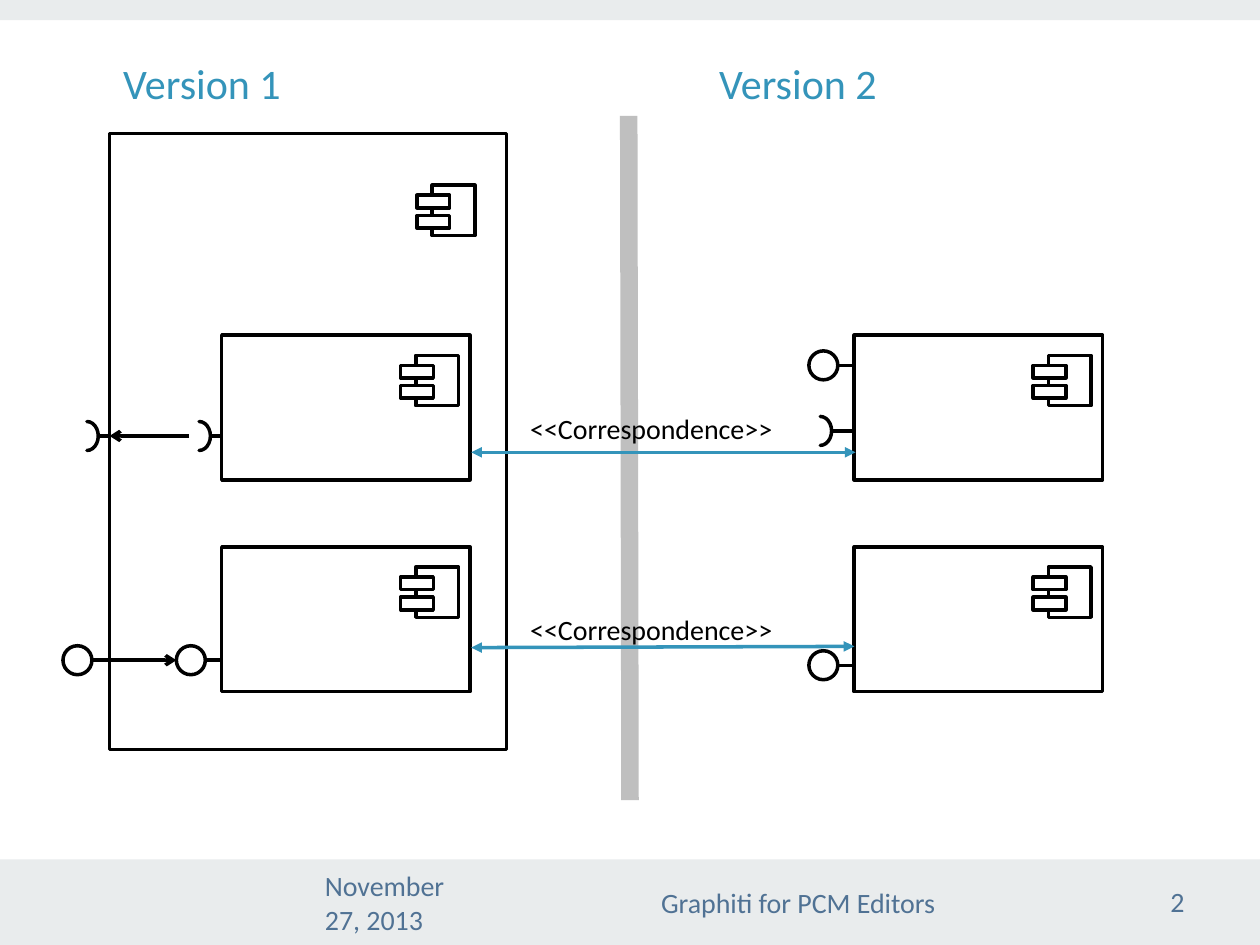
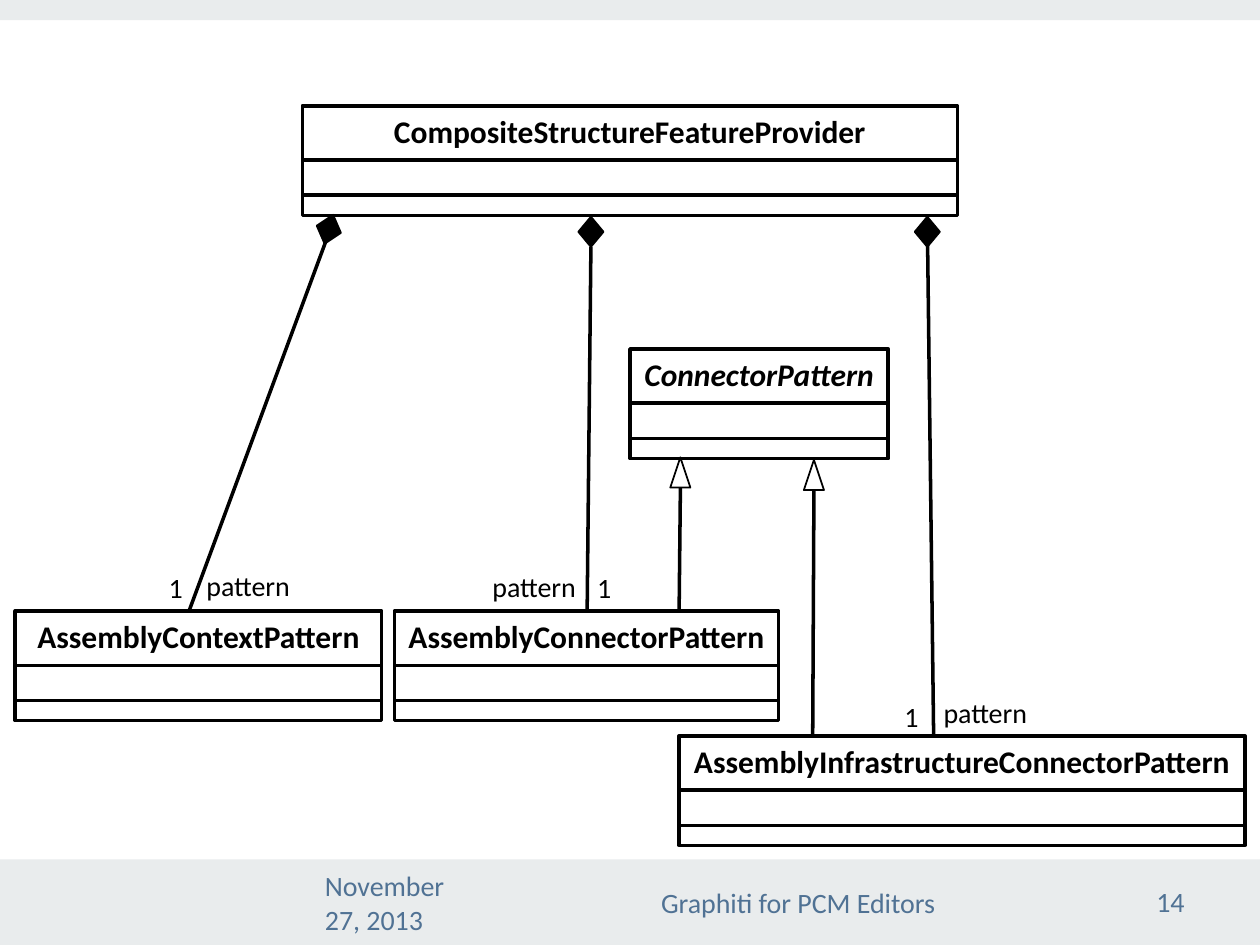
from lxml import etree
from pptx import Presentation
from pptx.dml.color import RGBColor
from pptx.enum import shapes as kinds
from pptx.enum import text as modes
from pptx.oxml import ns
from pptx.util import Inches, Pt

COLOURS = {
    "paper": "FFFFFF",
    "ink": "000000",
    "band": "E9ECED",
    "footer": "507294",
    "accent": "3494BA",
    "divider": "BFBFBF",
}
FONT = "Calibri"
BANDS = [(0, 6.82, 10, 0.68), (0, 0, 10, 0.16)]
SHAPE = kinds.MSO_SHAPE
ALIGN = modes.PP_ALIGN
LABEL = {"size": Pt(16)}
HEADING = {"size": Pt(24)}
CLASS_NAME = {"size": Pt(18), "bold": True}

NODE_SIZE = (1.97, 1.15)
BALL = 0.23
SOCKET_WIDTH = 0.09
CLASS_HEIGHT = 0.87
MARK_HEIGHT = 0.24


def colour(name):
    return RGBColor.from_string(COLOURS[name])


def write(shape, wording, formats, colour_name="ink", align=ALIGN.LEFT,
          anchor=modes.MSO_ANCHOR.TOP, wrap=False):
    frame = shape.text_frame
    frame.word_wrap = wrap
    frame.vertical_anchor = anchor
    paragraph = frame.paragraphs[0]
    paragraph.text = wording
    paragraph.alignment = align
    font = paragraph.runs[0].font
    font.name = FONT
    font.color.rgb = colour(colour_name)
    for attribute, value in formats.items():
        setattr(font, attribute, value)


def add_text(slide, box, wording, formats=LABEL, **options):
    write(slide.shapes.add_textbox(*map(Inches, box)), wording, formats, **options)


def add_figure(shapes, box, kind=SHAPE.RECTANGLE, fill="paper", line="ink", width=2):
    figure = shapes.add_shape(kind, *map(Inches, box))
    figure.shadow.inherit = False
    figure.fill.solid()
    figure.fill.fore_color.rgb = colour(fill)
    if line:
        figure.line.color.rgb = colour(line)
        figure.line.width = Pt(width)
    else:
        figure.line.fill.background()
    return figure


def add_line(shapes, start, end, line="ink", width=2, head=None, tail=None):
    connector = shapes.add_connector(
        kinds.MSO_CONNECTOR.STRAIGHT, *map(Inches, (*start, *end)))
    connector.line.color.rgb = colour(line)
    connector.line.width = Pt(width)
    outline = connector.line._get_or_add_ln()
    for tag, arrow in (("a:headEnd", head), ("a:tailEnd", tail)):
        if arrow:
            etree.SubElement(outline, ns.qn(tag), type=arrow)
    etree.SubElement(connector._element.spPr, ns.qn("a:effectLst"))


def add_base_slide(presentation, number):
    """Add a slide with the two bands and the footer texts."""
    slide = presentation.slides.add_slide(presentation.slide_layouts[6])
    for band in BANDS:
        add_figure(slide.shapes, band, fill="band", line=None)
    footers = [
        ((2.48, 6.96, 1.42, 0.4), "November 27, 2013", ALIGN.LEFT),
        ((4.21, 6.96, 4.25, 0.4), "Graphiti for PCM Editors", ALIGN.CENTER),
        ((8.86, 6.95, 0.64, 0.4), number, ALIGN.RIGHT),
    ]
    for box, wording, align in footers:
        add_text(slide, box, wording, colour_name="footer", align=align,
                 anchor=modes.MSO_ANCHOR.MIDDLE, wrap=True)
    return slide


def add_component_icon(slide, left, top):
    add_figure(slide.shapes, (left + 0.12, top, 0.34, 0.4))
    for drop in (0.08, 0.24):
        add_figure(slide.shapes, (left, top + drop, 0.26, 0.1))


def add_component(slide, left, top):
    add_figure(slide.shapes, (left, top, *NODE_SIZE))
    add_component_icon(slide, left + 1.42, top + 0.16)


def add_provided_interface(slide, left, middle, edge):
    """Draw a ball joined to the component edge."""
    add_figure(slide.shapes, (left, middle - BALL / 2, BALL, BALL), SHAPE.OVAL)
    add_line(slide.shapes, (left + BALL, middle), (edge, middle))


def add_required_interface(slide, left, middle, edge):
    """Draw a socket joined to the component edge."""
    socket = add_figure(
        slide.shapes, (left, middle - BALL / 2, SOCKET_WIDTH, BALL), SHAPE.MOON)
    socket.adjustments[0] = 0
    socket.rotation = 180
    add_line(slide.shapes, (left + SOCKET_WIDTH, middle), (edge, middle))


def add_correspondence(slide, start, end, label_top):
    add_line(slide.shapes, start, end, "accent", head="triangle", tail="triangle")
    add_text(slide, (4.11, label_top, 2.15, 0.37), "<<Correspondence>>")


def build_version_slide(presentation):
    slide = add_base_slide(presentation, "2")
    outer_left, inner_left, other_left = 0.87, 1.76, 6.78
    add_figure(slide.shapes, (outer_left, 1.06, 3.15, 4.89))
    add_component_icon(slide, 3.31, 1.47)
    add_line(slide.shapes, (4.99, 0.92), (5, 6.35), "divider", 10)

    for left in (inner_left, other_left):
        for top in (2.66, 4.34):
            add_component(slide, left, top)
    for left, middle, edge in [(1.58, 3.46, inner_left), (0.69, 3.46, outer_left),
                               (6.51, 3.42, other_left)]:
        add_required_interface(slide, left, middle, edge)
    for left, middle, edge in [(1.4, 5.24, inner_left), (0.5, 5.24, outer_left),
                               (6.42, 2.9, other_left), (6.42, 5.28, other_left)]:
        add_provided_interface(slide, left, middle, edge)

    add_line(slide.shapes, (1.5, 3.46), (outer_left, 3.46), tail="arrow")
    add_line(slide.shapes, (outer_left, 5.24), (1.4, 5.24), tail="arrow")
    add_correspondence(slide, (3.74, 3.59), (6.79, 3.59), 3.22)
    add_correspondence(slide, (3.74, 5.14), (6.78, 5.13), 4.81)
    for left, wording in ((0.88, "Version 1"), (5.61, "Version 2")):
        add_text(slide, (left, 0.41, 1.46, 0.5), wording, HEADING,
                 colour_name="accent")


def add_class(slide, left, top, width, name, italic=False):
    """Group a class box with its two compartment lines."""
    shapes = slide.shapes.add_group_shape().shapes
    box = add_figure(shapes, (left, top, width, CLASS_HEIGHT))
    write(box, name, {**CLASS_NAME, "italic": italic}, align=ALIGN.CENTER)
    for drop in (0.43, 0.71):
        add_line(shapes, (left, top + drop), (left + width, top + drop))


def add_mark(slide, kind, centre, top, width, fill, rotation=0):
    box = (centre - width / 2, top, width, MARK_HEIGHT)
    add_figure(slide.shapes, box, kind, fill, width=1).rotation = rotation


def add_composition(slide, start, end, diamond, rotation, one, role):
    """Link a part to its owner, with a diamond, multiplicity and role name."""
    add_line(slide.shapes, start, end)
    add_mark(slide, SHAPE.DIAMOND, *diamond, 0.2, "ink", rotation)
    add_text(slide, (*one, 0.32, 0.37), "1")
    add_text(slide, (*role, 0.88, 0.37), "pattern")


def add_generalization(slide, start, tip):
    add_line(slide.shapes, start, (tip[0], tip[1] + MARK_HEIGHT))
    add_mark(slide, SHAPE.ISOSCELES_TRIANGLE, *tip, 0.16, "paper")


def build_class_slide(presentation):
    slide = add_base_slide(presentation, "14")
    add_class(slide, 2.4, 0.84, 5.2, "CompositeStructureFeatureProvider")
    add_class(slide, 5, 2.77, 2.05, "ConnectorPattern", italic=True)
    add_class(slide, 0.12, 4.85, 2.91, "AssemblyContextPattern")
    add_class(slide, 3.13, 4.85, 3.05, "AssemblyConnectorPattern")
    add_class(slide, 5.39, 5.84, 4.49, "AssemblyInfrastructureConnectorPattern")

    add_composition(slide, (1.5, 4.85), (2.64, 1.77), (2.61, 1.7), 16.4,
                    one=(1.24, 4.48), role=(1.54, 4.46))
    add_composition(slide, (4.66, 4.85), (4.69, 1.96), (4.69, 1.72), 0,
                    one=(4.64, 4.48), role=(3.81, 4.47))
    add_composition(slide, (7.41, 5.84), (7.36, 1.77), (7.36, 1.72), 0,
                    one=(7.08, 5.5), role=(7.39, 5.47))
    add_generalization(slide, (5.39, 4.85), (5.4, 3.63))
    add_generalization(slide, (6.45, 5.84), (6.46, 3.65))


def main():
    presentation = Presentation()
    presentation.slide_width = Inches(10)
    presentation.slide_height = Inches(7.5)
    build_version_slide(presentation)
    build_class_slide(presentation)
    presentation.save("out.pptx")


if __name__ == "__main__":
    main()
